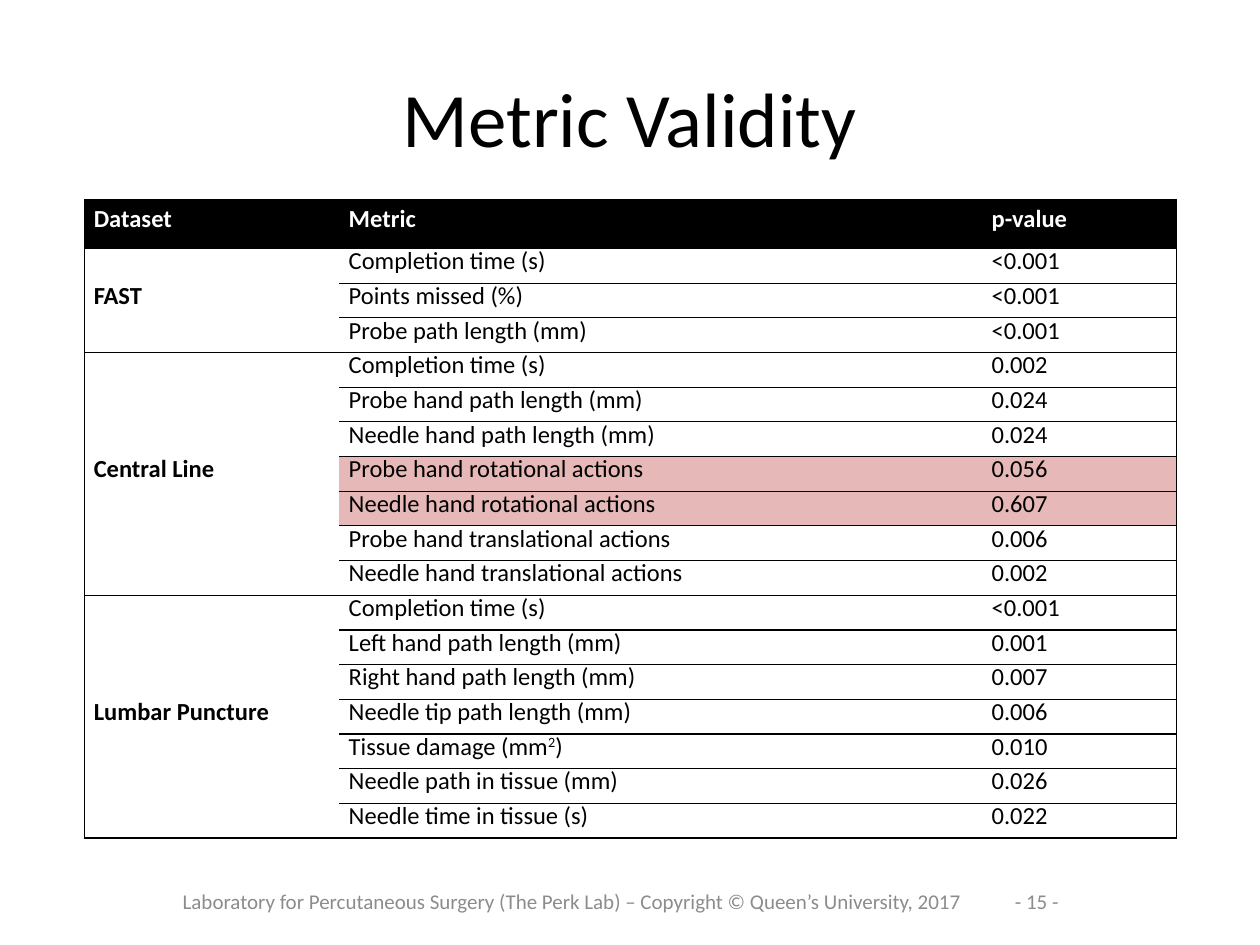
import pptx
import pptx.dml.color
import pptx.enum.text
import pptx.oxml
import pptx.oxml.ns
import pptx.util

Cm = pptx.util.Cm
Pt = pptx.util.Pt
RGBColor = pptx.dml.color.RGBColor
ALIGN = pptx.enum.text.PP_ALIGN
MIDDLE = pptx.enum.text.MSO_ANCHOR.MIDDLE

BLACK = RGBColor(0x00, 0x00, 0x00)
WHITE = RGBColor(0xFF, 0xFF, 0xFF)
GREY = RGBColor(0x8C, 0x8C, 0x8C)
PINK = RGBColor(0xE6, 0xB9, 0xB8)

FONT = "Calibri"
PLAIN_STYLE = "{2D5ABB26-0587-4C30-8999-92F81FD0307C}"  # no style, no grid
SIGNIFICANCE = 0.05

HEADERS = ["Dataset", "Metric", "p-value"]
COLUMN_WIDTHS = [Cm(5.14), Cm(12.96), Cm(3.92)]
HEADER_HEIGHT, ROW_HEIGHT = Cm(0.99), Cm(0.7)

# Carets enclose superscripts
DATASETS = {
    "FAST": [
        ("Completion time (s)", "<0.001"),
        ("Points missed (%)", "<0.001"),
        ("Probe path length (mm)", "<0.001"),
    ],
    "Central Line": [
        ("Completion time (s)", "0.002"),
        ("Probe hand path length (mm)", "0.024"),
        ("Needle hand path length (mm)", "0.024"),
        ("Probe hand rotational actions", "0.056"),
        ("Needle hand rotational actions", "0.607"),
        ("Probe hand translational actions", "0.006"),
        ("Needle hand translational actions", "0.002"),
    ],
    "Lumbar Puncture": [
        ("Completion time (s)", "<0.001"),
        ("Left hand path length (mm)", "0.001"),
        ("Right hand path length (mm)", "0.007"),
        ("Needle tip path length (mm)", "0.006"),
        ("Tissue damage (mm^2^)", "0.010"),
        ("Needle path in tissue (mm)", "0.026"),
        ("Needle time in tissue (s)", "0.022"),
    ],
}


def write_text(tf, text, size=14, color=BLACK, bold=False,
               align=ALIGN.LEFT, spacing=None):
    tf.word_wrap = True
    p = tf.paragraphs[0]
    p.alignment = align
    if spacing:
        p.line_spacing = spacing
    for i, part in enumerate(text.split("^")):
        r = p.add_run()
        r.text = part
        r.font.name = FONT
        r.font.size = Pt(size)
        r.font.bold = bold
        r.font.color.rgb = color
        if i % 2:
            r.font._element.set("baseline", "30000")


def set_borders(cell, sides):
    """Draw thin black lines on the given sides, in the order L, R, T, B."""
    tcPr = cell._tc.get_or_add_tcPr()
    for i, side in enumerate(sides):
        tcPr.insert(i, pptx.oxml.parse_xml(
            f'<a:ln{side} {pptx.oxml.ns.nsdecls("a")} w="{Pt(0.75)}">'
            f'<a:solidFill><a:srgbClr val="{BLACK}"/></a:solidFill></a:ln{side}>'))


def fill_cell(cell, text, sides, fill=None, **fmt):
    cell.vertical_anchor = MIDDLE
    cell.margin_left = cell.margin_right = Cm(0.19)
    cell.margin_top = cell.margin_bottom = 0
    if fill is None:
        cell.fill.background()
    else:
        cell.fill.solid()
        cell.fill.fore_color.rgb = fill
    set_borders(cell, sides)
    write_text(cell.text_frame, text, spacing=Pt(12), **fmt)


def add_title(s, text):
    sp = s.shapes.title
    sp.left, sp.top, sp.width, sp.height = Cm(1.27), Cm(0.76), Cm(22.86), Cm(3.18)
    sp.text_frame.vertical_anchor = MIDDLE
    write_text(sp.text_frame, text, size=44, align=ALIGN.CENTER)


def add_metric_table(s):
    row_count = 1 + sum(len(metrics) for metrics in DATASETS.values())
    sp = s.shapes.add_table(row_count, len(HEADERS), Cm(1.7), Cm(4.02),
                            sum(COLUMN_WIDTHS),
                            HEADER_HEIGHT + ROW_HEIGHT * (row_count - 1))
    table = sp.table
    table.horz_banding = False
    table._tbl.tblPr.find(pptx.oxml.ns.qn("a:tableStyleId")).text = PLAIN_STYLE
    for column, width in zip(table.columns, COLUMN_WIDTHS):
        column.width = width
    for i, row in enumerate(table.rows):
        row.height = ROW_HEIGHT if i else HEADER_HEIGHT

    # Header row
    for col, (header, sides) in enumerate(zip(HEADERS, ["LTB", "TB", "RTB"])):
        fill_cell(table.cell(0, col), header, sides, fill=BLACK,
                  color=WHITE, bold=True)

    # One merged dataset cell beside each group of metrics
    row = 1
    for dataset, metrics in DATASETS.items():
        last = row + len(metrics) - 1
        table.cell(row, 0).merge(table.cell(last, 0))
        fill_cell(table.cell(row, 0), dataset, "LTB", bold=True)
        for i, (metric, p_value) in enumerate(metrics, start=row):
            if i > row:
                fill_cell(table.cell(i, 0), "", "LB" if i == last else "L")
            weak = float(p_value.lstrip("<")) > SIGNIFICANCE
            fill = PINK if weak else None
            fill_cell(table.cell(i, 1), metric, "TB", fill=fill)
            fill_cell(table.cell(i, 2), p_value, "RTB", fill=fill)
        row = last + 1


def add_footer_text(s, text, left, width, align):
    sp = s.shapes.add_textbox(left, Cm(17.65), width, Cm(1.02))
    sp.text_frame.vertical_anchor = MIDDLE
    write_text(sp.text_frame, text, size=12, color=GREY, align=align)


def main():
    prs = pptx.Presentation()
    prs.slide_width, prs.slide_height = Cm(25.4), Cm(19.05)
    s = prs.slides.add_slide(prs.slide_layouts[5])
    add_title(s, "Metric Validity")
    add_metric_table(s)
    # Footer and page number
    add_footer_text(s, "Laboratory for Percutaneous Surgery (The Perk Lab) – "
                    "Copyright © Queen’s University, 2017",
                    Cm(3.18), Cm(16.71), ALIGN.CENTER)
    add_footer_text(s, "- 15 -", Cm(20.12), Cm(1.47), ALIGN.RIGHT)
    prs.save("out.pptx")


if __name__ == "__main__":
    main()
